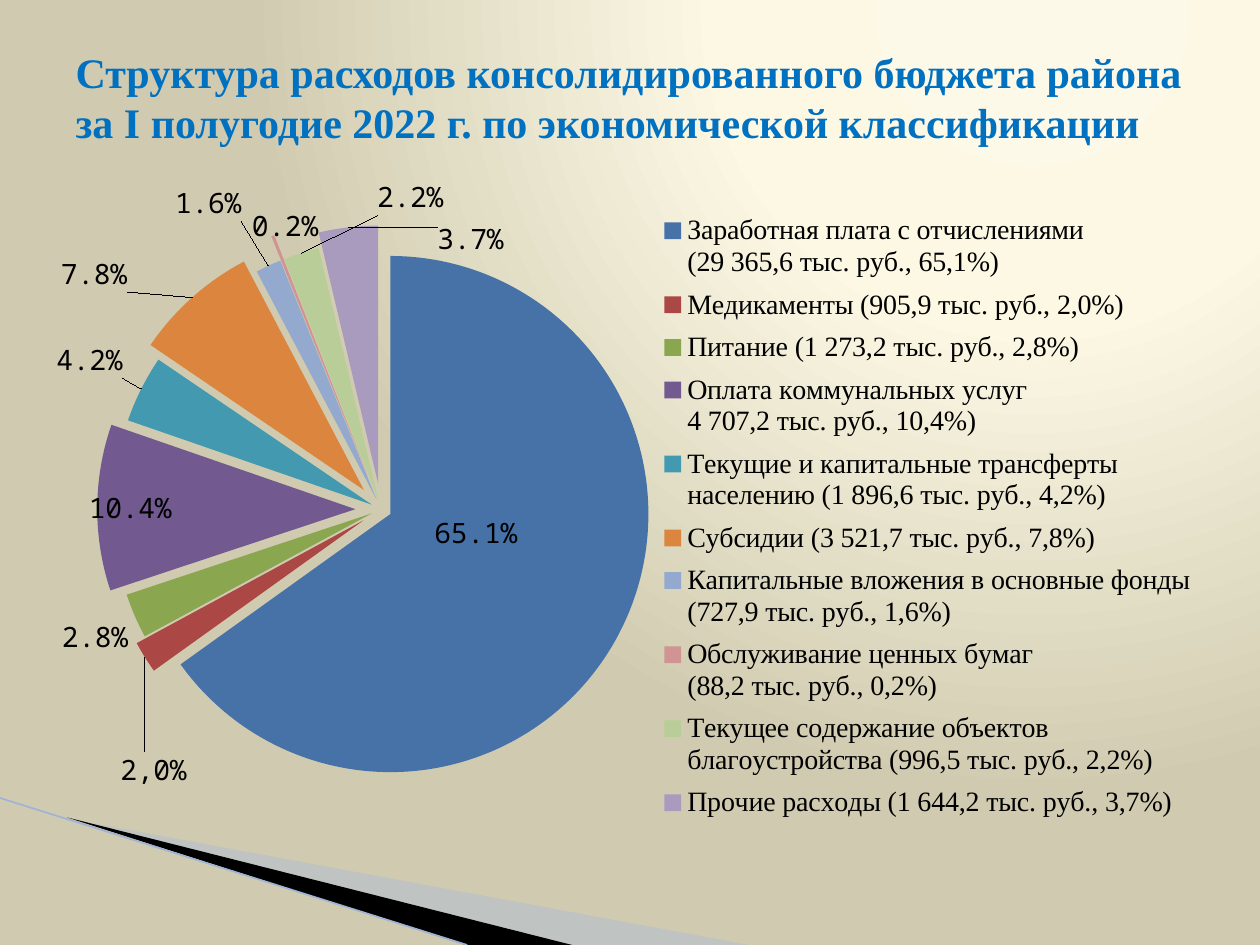
from dataclasses import dataclass

from lxml.etree import SubElement
from pptx import Presentation
from pptx.chart.data import CategoryChartData
from pptx.dml.color import RGBColor
from pptx.enum.chart import XL_CHART_TYPE, XL_LABEL_POSITION, XL_LEGEND_POSITION
from pptx.enum.shapes import MSO_CONNECTOR
from pptx.enum.text import MSO_ANCHOR, MSO_AUTO_SIZE, PP_ALIGN
from pptx.oxml import parse_xml
from pptx.oxml.ns import qn
from pptx.util import Pt

SERIF = "Times New Roman"
MONO = "Noto Sans Mono"
OUTSIDE = XL_LABEL_POSITION.OUTSIDE_END
CENTER = XL_LABEL_POSITION.CENTER


@dataclass
class Expense:
    """One budget item: legend text, share, colour, explosion and label placement."""
    legend: str
    share: float
    color: str
    explosion: int
    offset: tuple[float, float]
    label: str = ""
    position: XL_LABEL_POSITION = OUTSIDE


@dataclass
class Ribbon:
    """A filled corner ribbon with its vertices in points."""
    vertices: list[tuple[float, float]]
    color: str
    alpha: int = 100


EXPENSES = [
    Expense("Заработная плата с отчислениями\n(29 365,6 тыс. руб., 65,1%)", 0.651, "4672A8", 4, (-0.16, -0.16)),
    Expense("Медикаменты (905,9 тыс. руб., 2,0%)", 0.02, "AB4744", 8, (0.04, 0.12), "2,0%"),
    Expense("Питание (1 273,2 тыс. руб., 2,8%)", 0.028, "8AA64F", 4, (0, 0)),
    Expense("Оплата коммунальных услуг\n4 707,2 тыс. руб., 10,4%)", 0.104, "725990", 10, (-0.08, 0), position=CENTER),
    Expense("Текущие и капитальные трансферты\nнаселению (1 896,6 тыс. руб., 4,2%)", 0.042, "4299B0", 4, (-0.01, -0.01)),
    Expense("Субсидии (3 521,7 тыс. руб., 7,8%)", 0.078, "DC853E", 10, (-0.05, 0)),
    Expense("Капитальные вложения в основные фонды\n(727,9 тыс. руб., 1,6%)", 0.016, "93A9CE", 4, (-0.02, -0.05)),
    Expense("Обслуживание ценных бумаг\n(88,2 тыс. руб., 0,2%)", 0.002, "D09493", 14, (0.04, 0.02)),
    Expense("Текущее содержание объектов\nблагоустройства (996,5 тыс. руб., 2,2%)", 0.022, "B8CD97", 4, (0.12, -0.04)),
    Expense("Прочие расходы (1 644,2 тыс. руб., 3,7%)", 0.037, "A99BBD", 10, (0.13, 0.05)),
]
RIBBONS = [
    Ribbon([(39.6, 468.5), (428, 540), (328, 540)], "A7B9DB", 40),
    Ribbon([(38.2, 467.3), (327, 540), (266, 540)], "000000"),
]
BACKGROUND_STOPS = [(0, "FDF9E8"), (40, "FCF8E4"), (100, "D0CBB0")]


def rgb(color: str) -> RGBColor:
    """Turn a hex string into a colour."""
    return RGBColor.from_string(color)


def style_font(font, name: str, size: float, color: str, bold: bool = False) -> None:
    """Set the face, size, colour and weight of a font."""
    font.name, font.size, font.bold = name, Pt(size), bold
    font.color.rgb = rgb(color)


def paint_background(slide) -> None:
    """Fill the background with a radial gradient."""
    slide.background.fill.solid()
    properties = slide.element.find(".//" + qn("p:bgPr"))
    stops = "".join(
        f'<a:gs pos="{place * 1000}"><a:srgbClr val="{color}"/></a:gs>'
        for place, color in BACKGROUND_STOPS
    )
    properties[0] = parse_xml(
        '<a:gradFill xmlns:a="http://schemas.openxmlformats.org/drawingml/2006/main" rotWithShape="1">'
        f'<a:gsLst>{stops}</a:gsLst><a:path path="circle">'
        '<a:fillToRect l="65000" t="0" r="0" b="98000"/></a:path></a:gradFill>'
    )


def draw_ribbon(slide, ribbon: Ribbon) -> None:
    """Draw one corner ribbon."""
    start, *others = ribbon.vertices
    builder = slide.shapes.build_freeform(*start, scale=float(Pt(1)))
    builder.add_line_segments(others, close=True)
    outline = builder.convert_to_shape()
    outline.shadow.inherit = False
    outline.fill.solid()
    outline.fill.fore_color.rgb = rgb(ribbon.color)
    outline.line.fill.background()
    if ribbon.alpha < 100:
        color = outline.element.spPr.find(".//" + qn("a:srgbClr"))
        SubElement(color, qn("a:alpha"), val=str(ribbon.alpha * 1000))


def draw_edge(slide) -> None:
    """Draw the thin line along the ribbons."""
    edge = slide.shapes.add_connector(MSO_CONNECTOR.STRAIGHT, Pt(0), Pt(456), Pt(267), Pt(540))
    edge.line.color.rgb = rgb("9EB3D6")
    edge.line.width = Pt(0.95)
    SubElement(edge.element.spPr, qn("a:effectLst"))


def manual_layout(**values):
    """Build a manual chart layout element from its named parts."""
    parts = "".join(f'<c:{tag} val="{value}"/>' for tag, value in values.items())
    return parse_xml(
        '<c:layout xmlns:c="http://schemas.openxmlformats.org/drawingml/2006/chart">'
        f"<c:manualLayout>{parts}</c:manualLayout></c:layout>"
    )


def place_part(parent, after: str, **values) -> None:
    """Give a chart part a manual layout right after the named child, or first."""
    for old in parent.findall(qn("c:layout")):
        parent.remove(old)
    anchor = parent.find(qn(after)) if after else None
    parent.insert(0 if anchor is None else parent.index(anchor) + 1, manual_layout(**values))


def format_slice(point, expense: Expense) -> None:
    """Colour and explode one slice and place its label."""
    point.format.fill.solid()
    point.format.fill.fore_color.rgb = rgb(expense.color)
    point.format.line.fill.background()
    slice_part = point.format.fill._xPr.getparent()
    explosion = slice_part.makeelement(qn("c:explosion"), {"val": str(expense.explosion)})
    slice_part.find(qn("c:spPr")).addprevious(explosion)

    label = point.data_label
    if expense.label:
        label.text_frame.text = expense.label
        style_font(label.text_frame.paragraphs[0].runs[0].font, MONO, 16, "000000")
    else:
        style_font(label.font, MONO, 16, "000000")
    label.position = expense.position
    label_part = label._get_or_add_dLbl()
    for body in label_part.iter(qn("a:bodyPr")):
        body.set("wrap", "none")
    if any(expense.offset):
        x, y = expense.offset
        place_part(label_part, "c:idx", x=x, y=y)


def draw_expenses(slide) -> None:
    """Draw the exploded pie of expenses with its legend."""
    shares = CategoryChartData(number_format="0.0%")
    shares.categories = [expense.legend for expense in EXPENSES]
    shares.add_series("Series 1", [expense.share for expense in EXPENSES])
    chart = slide.shapes.add_chart(
        XL_CHART_TYPE.PIE, Pt(8.6), Pt(90.7), Pt(686), Pt(431), shares
    ).chart
    chart.has_title = False
    style_font(chart.font, MONO, 18, "000000")
    chart.has_legend = True
    chart.legend.position = XL_LEGEND_POSITION.RIGHT
    chart.legend.include_in_layout = False
    style_font(chart.legend.font, SERIF, 16, "000000")
    place_part(chart.legend._element, "c:legendPos", xMode="edge", yMode="edge",
               x=0.54, y=0.06, w=0.44, h=0.83)

    plot = chart.plots[0]
    plot.vary_by_categories = True
    place_part(chart._chartSpace.chart.plotArea, "", layoutTarget="inner", xMode="edge",
               yMode="edge", x=0.09, y=0.12, w=0.43, h=0.69)
    series = plot.series[0]
    labels = series.data_labels
    labels.show_value = True
    labels.number_format = "0.0%"
    labels.number_format_is_linked = False
    labels.position = OUTSIDE
    style_font(labels.font, MONO, 16, "000000")
    for index, expense in enumerate(EXPENSES):
        format_slice(series.points[index], expense)


def write_title(slide) -> None:
    """Write the slide title in its placeholder."""
    title = slide.shapes.title
    title.left, title.top, title.width, title.height = Pt(36), Pt(21.6), Pt(659), Pt(67)
    frame = title.text_frame
    frame.text = (
        "Структура расходов консолидированного бюджета района "
        "за I полугодие 2022 г. по экономической классификации"
    )
    frame.word_wrap = True
    frame.auto_size = MSO_AUTO_SIZE.NONE
    frame.vertical_anchor = MSO_ANCHOR.MIDDLE
    heading = frame.paragraphs[0]
    heading.alignment = PP_ALIGN.LEFT
    style_font(heading.runs[0].font, SERIF, 24, "0070C0", bold=True)


def main() -> None:
    """Build the slide and save it."""
    presentation = Presentation()
    presentation.slide_width, presentation.slide_height = Pt(720), Pt(540)
    slide = presentation.slides.add_slide(presentation.slide_layouts[5])
    paint_background(slide)
    for ribbon in RIBBONS:
        draw_ribbon(slide, ribbon)
    draw_edge(slide)
    draw_expenses(slide)
    write_title(slide)
    presentation.save("out.pptx")


if __name__ == "__main__":
    main()
